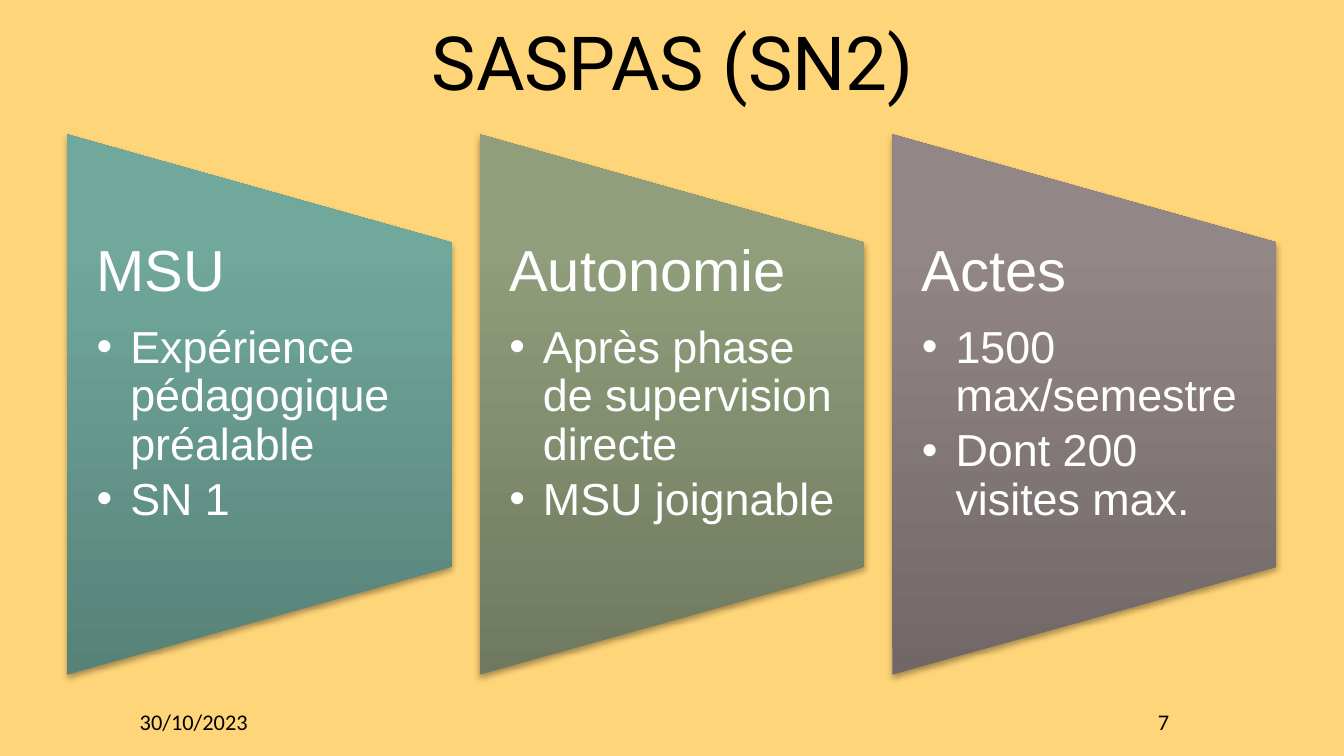
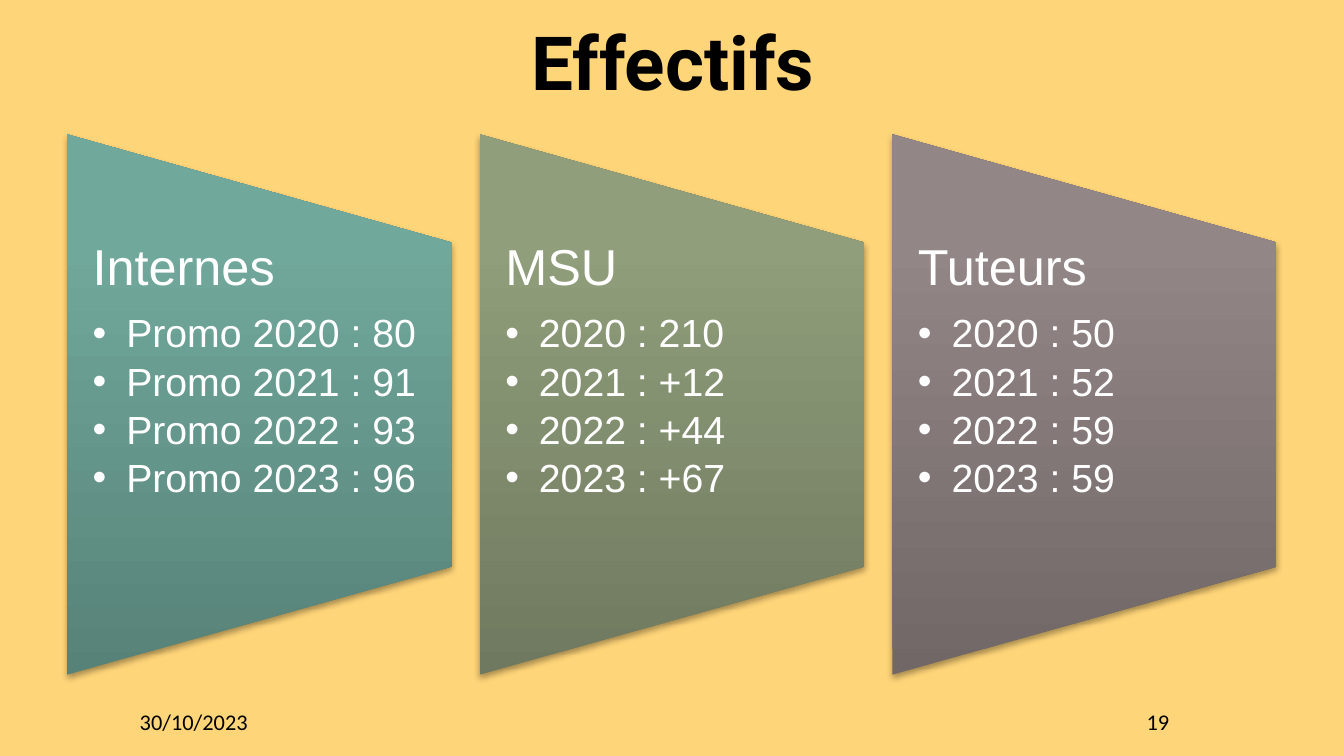
"""Build two slides of three tapered panels under a title."""
import pptx
import pptx.oxml
import pptx.oxml.ns
import pptx.util
from pptx.dml.color import RGBColor
from pptx.enum.shapes import MSO_SHAPE
from pptx.enum.text import MSO_ANCHOR, PP_ALIGN
from pptx.util import Inches

BLACK = RGBColor(0x00, 0x00, 0x00)
WHITE = RGBColor(0xFF, 0xFF, 0xFF)
SAND = RGBColor(0xFF, 0xD5, 0x79)
TEAL = (RGBColor(0x57, 0x82, 0x78), RGBColor(0x71, 0xA8, 0x9C), RGBColor(0x70, 0xAA, 0x9D))
OLIVE = (RGBColor(0x6F, 0x79, 0x5F), RGBColor(0x90, 0x9E, 0x7B), RGBColor(0x91, 0x9F, 0x7B))
TAUPE = (RGBColor(0x71, 0x67, 0x67), RGBColor(0x93, 0x86, 0x86), RGBColor(0x94, 0x87, 0x87))
PANEL_GRADIENTS = (TEAL, OLIVE, TAUPE)
GRADIENT_STOPS = (0, 80, 100)

SLIDE_WIDTH = Inches(10)
SLIDE_HEIGHT = SLIDE_WIDTH * 9 // 16
PANEL_LEFT, PANEL_TOP = 0.5, 1.0
PANEL_WIDTH, PANEL_HEIGHT = 2.86, 4.02
PANEL_STEP = 3.07
TEXT_TOP, TEXT_HEIGHT = 1.8, 2.41
BULLET_INDENT = 0.25

DATE = "30/10/2023"
SASPAS_PANELS = (
    ("MSU", ("Expérience pédagogique préalable", "SN 1")),
    ("Autonomie", ("Après phase de supervision directe", "MSU joignable")),
    ("Actes", ("1500 max/semestre", "Dont 200 visites max.")),
)
HEADCOUNT_PANELS = (
    ("Internes", ("Promo 2020 : 80", "Promo 2021 : 91", "Promo 2022 : 93", "Promo 2023 : 96")),
    ("MSU", ("2020 : 210", "2021 : +12", "2022 : +44", "2023 : +67")),
    ("Tuteurs", ("2020 : 50", "2021 : 52", "2022 : 59", "2023 : 59")),
)


def drawing_element(tag, attributes, content=""):
    """Return a DrawingML element made from its tag, attributes and content."""
    namespace = pptx.oxml.ns.nsdecls("a")
    return pptx.oxml.parse_xml(f"<a:{tag} {namespace} {attributes}>{content}</a:{tag}>")


def set_frame(text_frame, side_inset=0, anchor=MSO_ANCHOR.TOP):
    """Give a text frame its wrapping, insets and anchor."""
    text_frame.word_wrap = True
    text_frame.margin_left = text_frame.margin_right = Inches(side_inset)
    text_frame.margin_top = text_frame.margin_bottom = 0
    text_frame.vertical_anchor = anchor


def format_paragraph(paragraph, font_name, size, color, line_spacing,
                     alignment=PP_ALIGN.LEFT, space_after=0, bold=False):
    """Format a paragraph and its runs."""
    paragraph.alignment = alignment
    paragraph.line_spacing = line_spacing
    paragraph.space_before = pptx.util.Pt(0)
    paragraph.space_after = pptx.util.Pt(space_after)
    for run in paragraph.runs:
        run.font.name = font_name
        run.font.size = pptx.util.Pt(size)
        run.font.color.rgb = color
        run.font.bold = bold


def set_title(slide, text, bold):
    """Place and format the slide title."""
    title = slide.shapes.title
    title.left, title.top = Inches(0.2), Inches(0.12)
    title.width, title.height = Inches(9.61), Inches(0.73)
    title.text_frame.text = text
    set_frame(title.text_frame, anchor=MSO_ANCHOR.MIDDLE)
    format_paragraph(title.text_frame.paragraphs[0], "Roboto", 40, BLACK, 0.93,
                     PP_ALIGN.CENTER, bold=bold)


def add_footer_text(slide, text, left, width, alignment):
    """Add one text of the footer line."""
    box = slide.shapes.add_textbox(Inches(left), Inches(5.18), Inches(width), Inches(0.39))
    box.text_frame.text = text
    set_frame(box.text_frame, anchor=MSO_ANCHOR.MIDDLE)
    format_paragraph(box.text_frame.paragraphs[0], "Calibri", 12, BLACK, 0.95, alignment)


def add_panel_shape(group, left, colors):
    """Add a tapered panel with a vertical gradient and a soft shadow."""
    turn_offset = (PANEL_HEIGHT - PANEL_WIDTH) / 2
    shape = group.shapes.add_shape(
        MSO_SHAPE.FLOWCHART_MANUAL_OPERATION,
        Inches(left - turn_offset), Inches(PANEL_TOP + turn_offset),
        Inches(PANEL_HEIGHT), Inches(PANEL_WIDTH))
    shape.rotation = 270
    shape.line.fill.background()
    stops = "".join(
        f'<a:gs pos="{position * 1000}"><a:srgbClr val="{color}"/></a:gs>'
        for position, color in zip(GRADIENT_STOPS, colors))
    gradient = drawing_element(
        "gradFill", 'rotWithShape="0"',
        f'<a:gsLst>{stops}</a:gsLst><a:lin ang="16200000" scaled="0"/>')
    properties = shape._element.spPr
    properties.find(pptx.oxml.ns.qn("a:prstGeom")).addnext(gradient)
    properties.append(drawing_element(
        "effectLst", "",
        '<a:outerShdw blurRad="40000" dist="23000" dir="5400000" rotWithShape="0">'
        '<a:srgbClr val="000000"><a:alpha val="35000"/></a:srgbClr></a:outerShdw>'))


def add_bullet(paragraph):
    """Give a paragraph a round bullet and a hanging indent."""
    properties = paragraph._p.get_or_add_pPr()
    properties.set("marL", str(Inches(BULLET_INDENT)))
    properties.set("indent", str(-Inches(BULLET_INDENT)))
    properties.append(drawing_element("buFont", 'typeface="Arial"'))
    properties.append(drawing_element("buChar", 'char="•"'))
    paragraph.level = 1


def add_panel_text(group, left, heading, items, heading_size, item_size, side_inset):
    """Add the heading and the bullets of a panel."""
    box = group.shapes.add_textbox(Inches(left), Inches(TEXT_TOP),
                                   Inches(PANEL_WIDTH), Inches(TEXT_HEIGHT))
    text_frame = box.text_frame
    set_frame(text_frame, side_inset)
    text_frame.text = heading
    format_paragraph(text_frame.paragraphs[0], "Arial", heading_size, WHITE, 0.9,
                     space_after=heading_size * 0.35)
    for item in items:
        paragraph = text_frame.add_paragraph()
        paragraph.text = item
        add_bullet(paragraph)
        format_paragraph(paragraph, "Arial", item_size, WHITE, 0.9,
                         space_after=item_size * 0.15)


def add_panel_slide(presentation, title, bold, number, panels,
                    heading_size, item_size, side_inset):
    """Add a slide with a title, three panels and a footer."""
    slide = presentation.slides.add_slide(presentation.slide_layouts[5])
    slide.background.fill.solid()
    slide.background.fill.fore_color.rgb = SAND
    set_title(slide, title, bold)
    group = slide.shapes.add_group_shape()
    for index, ((heading, items), colors) in enumerate(zip(panels, PANEL_GRADIENTS)):
        left = PANEL_LEFT + index * PANEL_STEP
        add_panel_shape(group, left, colors)
        add_panel_text(group, left, heading, items, heading_size, item_size, side_inset)
    add_footer_text(slide, DATE, 1.04, 1.04, PP_ALIGN.LEFT)
    add_footer_text(slide, number, 7.44, 1.26, PP_ALIGN.RIGHT)


def main():
    """Build and save the presentation."""
    presentation = pptx.Presentation()
    presentation.slide_width = SLIDE_WIDTH
    presentation.slide_height = SLIDE_HEIGHT
    add_panel_slide(presentation, "SASPAS (SN2)", False, "7", SASPAS_PANELS, 31, 24, 0.22)
    add_panel_slide(presentation, "Effectifs", True, "19", HEADCOUNT_PANELS, 27, 21, 0.19)
    presentation.save("out.pptx")


if __name__ == "__main__":
    main()
